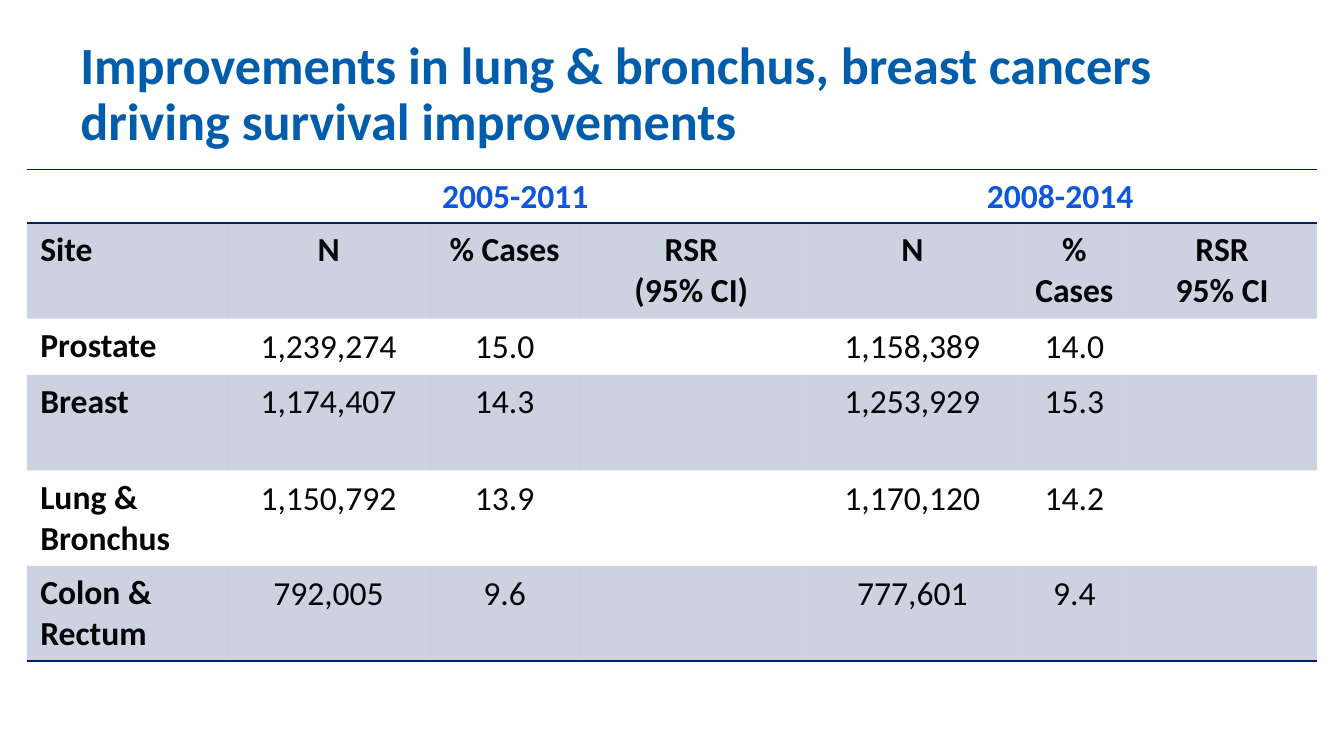
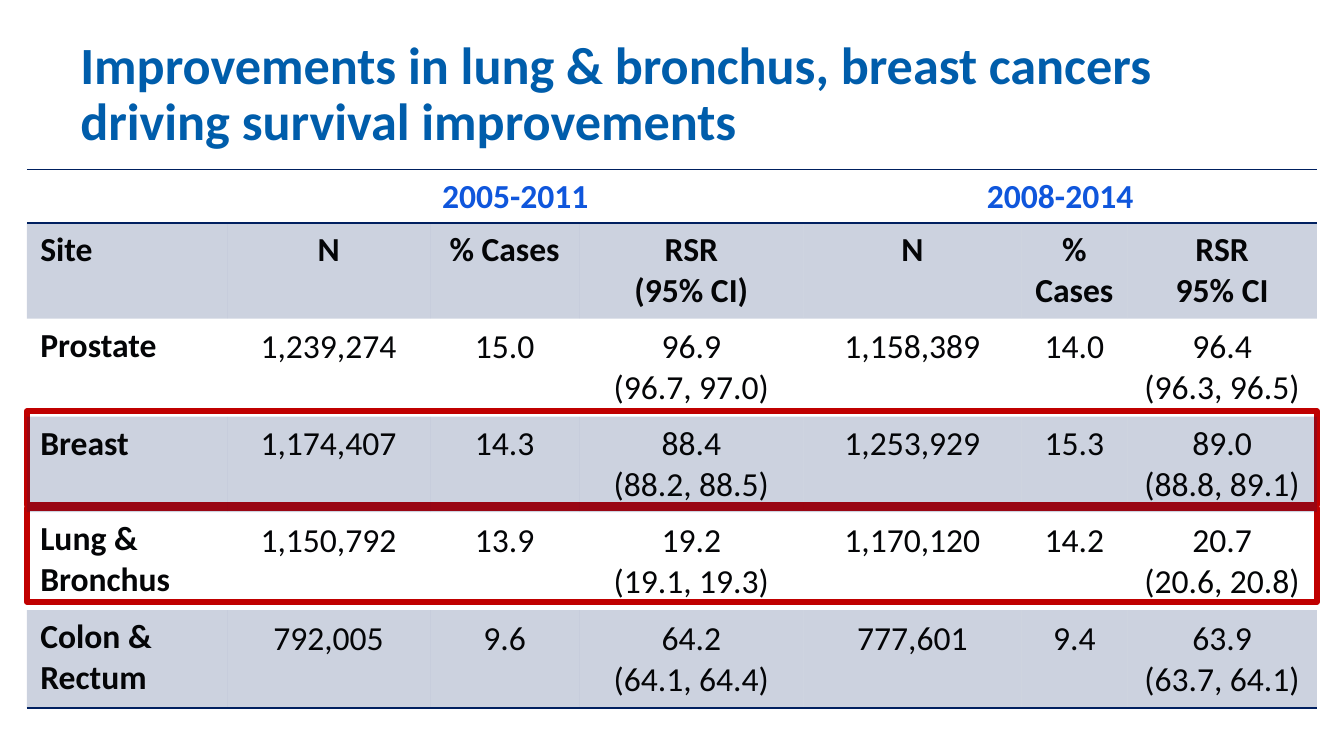
from lxml.etree import SubElement as Sub
from pptx import Presentation
from pptx.dml.color import RGBColor as Rgb
from pptx.enum.shapes import MSO_SHAPE as Shape
from pptx.enum.text import MSO_ANCHOR as Anchor, PP_ALIGN as Align
from pptx.oxml import parse_xml
from pptx.oxml.ns import nsdecls, qn
from pptx.util import Inches, Pt

TITLE = "Improvements in lung & bronchus, breast cancers driving survival improvements"
SPANS = {1: "2005-2011", 4: "2008-2014"}
HEADS = ["Site", "N", "% Cases", "RSR\n(95% CI)", "N", "% Cases", "RSR\n95% CI"]
SITES = [
    ["Prostate", "1,239,274", "15.0", "96.9\n(96.7, 97.0)",
     "1,158,389", "14.0", "96.4\n(96.3, 96.5)"],
    ["Breast", "1,174,407", "14.3", "88.4\v(88.2, 88.5)",
     "1,253,929", "15.3", "89.0\v(88.8, 89.1)"],
    ["Lung & Bronchus", "1,150,792", "13.9", "19.2\n(19.1, 19.3)",
     "1,170,120", "14.2", "20.7\n(20.6, 20.8)"],
    ["Colon & Rectum", "792,005", "9.6", "64.2\n(64.1, 64.4)",
     "777,601", "9.4", "63.9\n(63.7, 64.1)"],
]
RATES = (3, 6)
TIGHT = (2, 4, 5)  # rows whose numbers have narrow, even margins

# Each slide: whether survival rates show, row heights, tops of the red frames
SLIDES = [
    (False, [0.4, 0.71, 0.42, 0.71, 0.71, 0.71], []),
    (True, [0.4, 0.71, 0.73, 0.71, 0.73, 0.73], [3.06, 3.78]),
]

COLORS = {"title": "005DAB", "years": "0F56DC", "text": "040507",
          "navy": "002060", "frame": "C00000"}
LEFT, TOP, WIDTH = 0.2, 1.26, 9.6
COLS = [1.49, 1.51, 1.11, 1.67, 1.62, 0.79, 1.41]
FRAME_H = 0.7
PLAIN = "{2D5ABB26-0587-4C30-8999-92F81FD0307C}"


def color(key):
    return Rgb.from_string(COLORS[key])


def write(frame, text, size, key, bold, **form):
    frame.text = text
    for para in frame.paragraphs:
        for name, value in form.items():
            setattr(para, name, value)
        for run in para.runs:
            font = {"name": "Calibri", "size": Pt(size), "bold": bold}
            for name, value in font.items():
                setattr(run.font, name, value)
            run.font.color.rgb = color(key)


def tint(cell):
    """Fill a cell with navy at 20 percent."""
    cell.fill.solid()
    cell.fill.fore_color.rgb = color("navy")
    tone = cell._tc.tcPr.find(".//" + qn("a:srgbClr"))
    Sub(tone, qn("a:alpha"), val="20000")


def rule(cell, sides):
    """Draw navy lines on the given sides, T before B."""
    for spot, side in enumerate(sides):
        cell._tc.get_or_add_tcPr().insert(spot, parse_xml(
            f'<a:ln{side} {nsdecls("a")} w="12700"><a:solidFill>'
            f'<a:srgbClr val="{COLORS["navy"]}"/></a:solidFill></a:ln{side}>'))


def add_title(slide):
    box = slide.shapes.add_textbox(Inches(0.5), Inches(0.23), Inches(9), Inches(0.94))
    frame = box.text_frame
    frame.word_wrap = True
    frame.vertical_anchor = Anchor.BOTTOM
    write(frame, TITLE, 28, "title", True, line_spacing=Pt(30))


def add_frame(slide, top):
    box = slide.shapes.add_shape(Shape.RECTANGLE, Inches(LEFT), Inches(top),
                                 Inches(WIDTH), Inches(FRAME_H))
    box.shadow.inherit = False
    box.fill.background()
    box.line.color.rgb = color("frame")
    box.line.width = Pt(3)


def add_sites(slide, rates, heights):
    years = [SPANS.get(col, "") for col in range(len(COLS))]
    rows = [years, HEADS] + SITES
    last = len(rows) - 1
    table = slide.shapes.add_table(len(rows), len(COLS), Inches(LEFT), Inches(TOP),
                                   Inches(WIDTH), Inches(sum(heights))).table
    table.first_row = table.horz_banding = False
    table._tbl.tblPr.find(qn("a:tableStyleId")).text = PLAIN
    for col, width in zip(table.columns, COLS):
        col.width = Inches(width)
    for row, height in zip(table.rows, heights):
        row.height = Inches(height)
    for start in SPANS:
        table.cell(0, start).merge(table.cell(0, start + 2))

    for r, row in enumerate(rows):
        for c, text in enumerate(row):
            cell = table.cell(r, c)
            if r > 1 and c in RATES and not rates:
                text = ""
            if text:
                write(cell.text_frame, text, 18, "text" if r else "years",
                      r < 2 or c == 0, alignment=Align.CENTER if c else Align.LEFT)
            if text and c and r in TIGHT:
                for side in ("left", "top", "right", "bottom"):
                    setattr(cell, "margin_" + side, Inches(0.06))
            if r % 2:
                tint(cell)
            else:
                cell.fill.background()
            rule(cell, {0: "TB", last: "B"}.get(r, ""))


def main():
    deck = Presentation()
    deck.slide_width = Inches(10)
    deck.slide_height = deck.slide_width * 9 // 16
    for rates, heights, tops in SLIDES:
        slide = deck.slides.add_slide(deck.slide_layouts[6])
        add_title(slide)
        for top in tops:
            add_frame(slide, top)
        add_sites(slide, rates, heights)
    deck.save("out.pptx")


if __name__ == "__main__":
    main()
